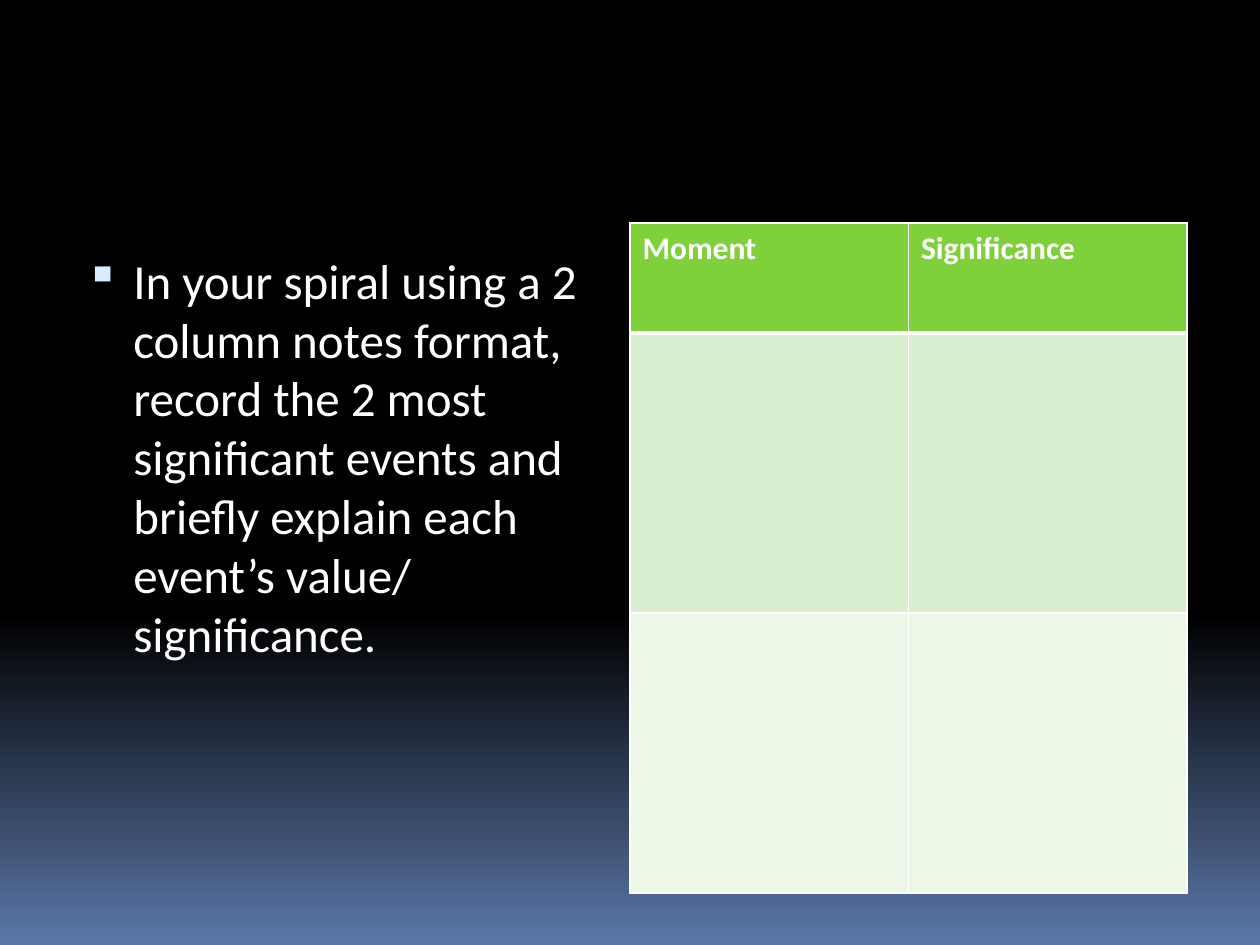
from copy import deepcopy

from lxml import etree
from pptx import Presentation
from pptx import util as u
from pptx.dml.color import RGBColor
from pptx.oxml import parse_xml
from pptx.oxml.ns import nsdecls, qn

PX_PER_INCH = 126
WHITE = "FFFFFF"
BULLET_BLUE = "D6ECFF"
ROW_FILLS = ["7FD13B", "D8EECE", "ECF7E8"]
SKY = [(0, "000000"), (0.65, "000000"), (1, "5B77A8")]
INSTRUCTION = (
    "In your spiral using a 2 column notes format, record the 2 most "
    "significant events and briefly explain each event’s value/ significance."
)
HEADINGS = ["Moment", "Significance"]
BODY_FONT = {"name": "Calibri", "size": u.Pt(28), "bold": False}
HEADING_FONT = {"name": "Calibri", "size": u.Pt(18), "bold": True}


def px(length):
    """Turn pixels into EMU."""
    return u.Emu(round(length * 914400 / PX_PER_INCH))


def color(hex_string):
    """Turn a hex string into a colour."""
    return RGBColor.from_string(hex_string)


def write(paragraph, words, font_format):
    """Add one white run with the given font values."""
    run = paragraph.add_run()
    run.text = words
    for name, value in font_format.items():
        setattr(run.font, name, value)
    run.font.color.rgb = color(WHITE)


def paint_background(slide):
    """Fill the slide with a vertical fade from black to blue."""
    sky = slide.background.fill
    sky.gradient()
    sky.gradient_angle = 270
    stop_list = slide.element.find(".//" + qn("a:gsLst"))
    stop_list.append(deepcopy(stop_list[0]))
    for stop, (position, shade) in zip(sky.gradient_stops, SKY):
        stop.position = position
        stop.color.rgb = color(shade)


def add_bullet(paragraph, hanging):
    """Give a paragraph a small square bullet with a hanging indent."""
    properties = paragraph._p.get_or_add_pPr()
    properties.set("marL", str(px(57)))
    properties.set("indent", str(-px(hanging)))
    tint = etree.SubElement(properties, qn("a:buClr"))
    etree.SubElement(tint, qn("a:srgbClr"), val=BULLET_BLUE)
    etree.SubElement(properties, qn("a:buSzPct"), val="95000")
    etree.SubElement(properties, qn("a:buChar"), char="▪")


def add_instruction(slide, left, top, width, height):
    """Place the bulleted instruction in its box."""
    instruction = slide.shapes.add_textbox(*map(px, (left, top, width, height)))
    instruction.text_frame.word_wrap = True
    paragraph = instruction.text_frame.paragraphs[0]
    paragraph.space_before = u.Pt(7)
    add_bullet(paragraph, 48)
    write(paragraph, INSTRUCTION, BODY_FONT)


def add_borders(cell, widths):
    """Draw white borders, given points by side in L, R, T, B order."""
    properties = cell._tc.get_or_add_tcPr()
    for index, (side, points) in enumerate(widths.items()):
        properties.insert(index, parse_xml(
            f'<a:ln{side} {nsdecls("a")} w="{u.Pt(points)}"><a:solidFill>'
            f'<a:srgbClr val="{WHITE}"/></a:solidFill></a:ln{side}>'
        ))


def add_notes_table(slide, left, top, width, height, header_height):
    """Place the two-column notes table with two equal empty rows."""
    notes = slide.shapes.add_table(
        len(ROW_FILLS), len(HEADINGS), *map(px, (left, top, width, height))
    ).table
    for column in notes.columns:
        column.width = px(width / len(HEADINGS))
    entry_height = (height - header_height) / (len(ROW_FILLS) - 1)
    for row_index, (row, shade) in enumerate(zip(notes.rows, ROW_FILLS)):
        row.height = px(entry_height if row_index else header_height)
        widths = {"L": 1, "R": 1, "T": 3 if row_index == 1 else 1,
                  "B": 1 if row_index else 3}
        for cell in row.cells:
            cell.fill.solid()
            cell.fill.fore_color.rgb = color(shade)
            add_borders(cell, widths)
    for cell, heading in zip(notes.rows[0].cells, HEADINGS):
        write(cell.text_frame.paragraphs[0], heading, HEADING_FONT)


def main():
    """Build and save the slide."""
    deck = Presentation()
    deck.slide_width, deck.slide_height = px(1260), px(945)
    slide = deck.slides.add_slide(deck.slide_layouts[6])
    paint_background(slide)
    add_instruction(slide, 64, 244, 557, 624)
    add_notes_table(slide, 630, 223, 557, 670, 110)
    deck.save("out.pptx")


if __name__ == "__main__":
    main()
